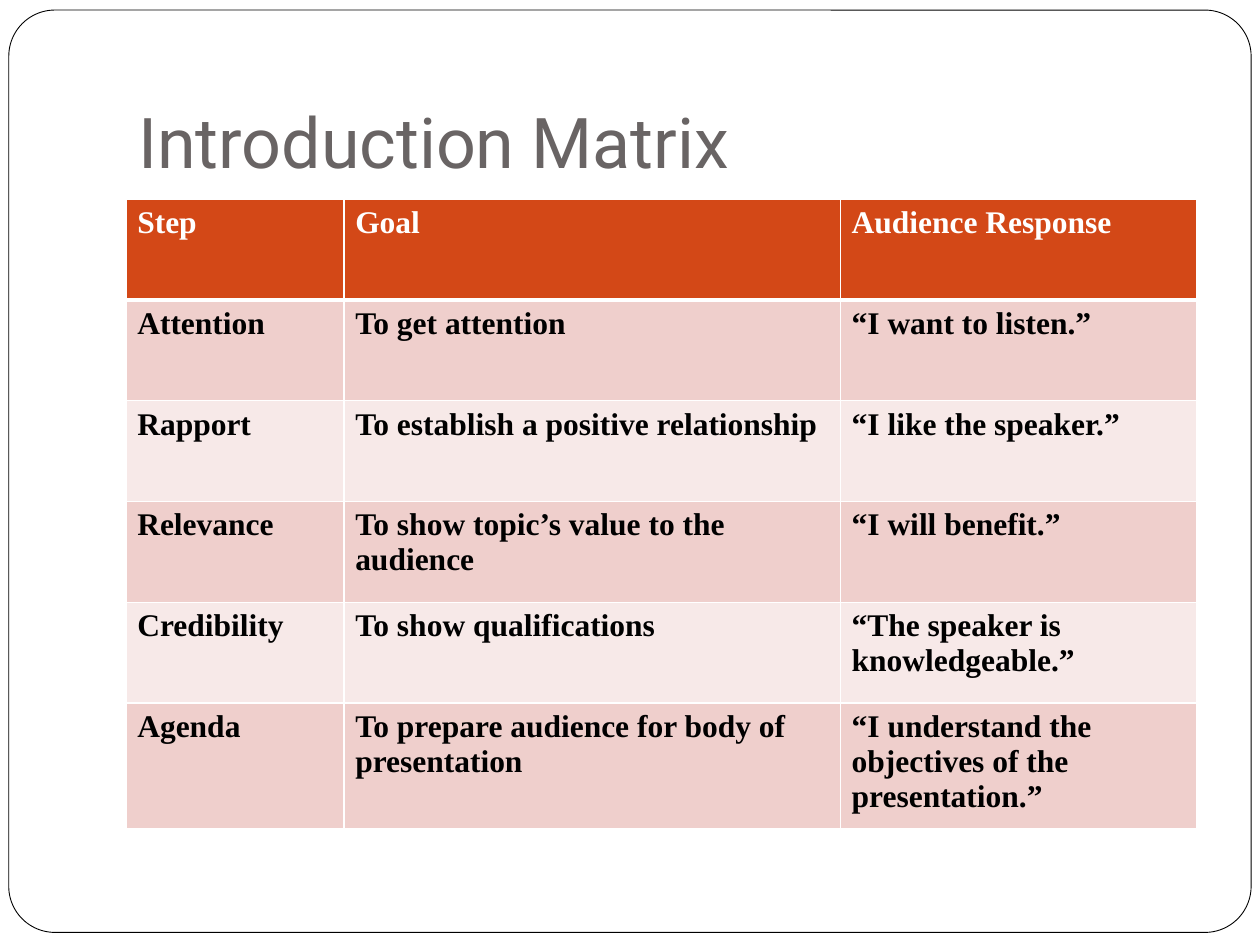
from dataclasses import dataclass

from lxml import etree
from pptx import Presentation
from pptx.dml.color import RGBColor
from pptx.enum import shapes, text
from pptx.oxml import ns
from pptx.util import Inches, Pt


@dataclass(frozen=True)
class Theme:
    title_font: str = "Roboto"
    body_font: str = "Times New Roman"
    title_size: float = 40
    body_size: float = 18
    title: str = "696464"
    header: str = "D34817"
    bands: tuple[str, str] = ("EFCFCC", "F7E9E8")
    white: str = "FFFFFF"
    black: str = "000000"
    rule: float = 1
    header_rule: float = 3


@dataclass(frozen=True)
class Step:
    name: str
    goal: str
    response: str


THEME = Theme()
HEADER = Step("Step", "Goal", "Audience Response")
STEPS = [
    Step("Attention", "To get attention", "“I want to listen.”"),
    Step("Rapport", "To establish a positive relationship", "“I like the speaker.”"),
    Step("Relevance", "To show topic’s value to the audience", "“I will benefit.”"),
    Step("Credibility", "To show qualifications", "“The speaker is knowledgeable.”"),
    Step("Agenda", "To prepare audience for body of presentation",
         "“I understand the objectives of the presentation.”"),
]
COLUMN_WIDTHS = (1.73, 3.94, 2.83)
ROW_HEIGHT = 0.8


def write(frame, words: str, *, font: str, size: float, color: str, bold: bool = False) -> None:
    """Put one formatted paragraph in a text frame."""
    frame.word_wrap = True
    span = frame.paragraphs[0].add_run()
    span.text = words
    span.font.name = font
    span.font.size = Pt(size)
    span.font.bold = bold
    span.font.color.rgb = RGBColor.from_string(color)


def set_borders(cell, color: str, **widths: float) -> None:
    """Draw cell edges, given as L, R, T and B in points; call before the fill."""
    properties = cell._tc.get_or_add_tcPr()
    for edge, width in widths.items():
        line = etree.SubElement(properties, ns.qn(f"a:ln{edge}"), w=str(Pt(width)))
        fill = etree.SubElement(line, ns.qn("a:solidFill"))
        etree.SubElement(fill, ns.qn("a:srgbClr"), val=color)


def add_frame(page) -> None:
    box = page.shapes.add_shape(shapes.MSO_SHAPE.ROUNDED_RECTANGLE,
                                Inches(0.07), Inches(0.08), Inches(9.86), Inches(7.32))
    box.adjustments[0] = 0.05
    box.shadow.inherit = False
    box.fill.solid()
    box.fill.fore_color.rgb = RGBColor.from_string(THEME.white)
    box.line.color.rgb = RGBColor.from_string(THEME.black)
    box.line.width = Pt(0.5)


def add_title(page, words: str) -> None:
    box = page.shapes.add_textbox(Inches(1), Inches(0.3), Inches(8.5), Inches(1.25))
    frame = box.text_frame
    frame.vertical_anchor = text.MSO_ANCHOR.BOTTOM
    frame.margin_bottom = Inches(0.1)
    write(frame, words, font=THEME.title_font, size=THEME.title_size, color=THEME.title)


def add_matrix(page, steps: list[Step]) -> None:
    rows = [HEADER, *steps]
    table = page.shapes.add_table(len(rows), len(COLUMN_WIDTHS), Inches(1), Inches(1.58),
                                  Inches(sum(COLUMN_WIDTHS)),
                                  Inches(ROW_HEIGHT * len(rows))).table
    for column, width in zip(table.columns, COLUMN_WIDTHS):
        column.width = Inches(width)
    for index, step in enumerate(rows):
        is_header = index == 0
        background = THEME.header if is_header else THEME.bands[(index - 1) % 2]
        ink = THEME.white if is_header else THEME.black
        # The heavy rule is shared by the header and the row below it
        top = THEME.header_rule if index == 1 else THEME.rule
        bottom = THEME.header_rule if is_header else THEME.rule
        for cell, words in zip(table.rows[index].cells, (step.name, step.goal, step.response)):
            set_borders(cell, THEME.white, L=THEME.rule, R=THEME.rule, T=top, B=bottom)
            cell.fill.solid()
            cell.fill.fore_color.rgb = RGBColor.from_string(background)
            cell.margin_left = cell.margin_right = Inches(0.09)
            write(cell.text_frame, words, font=THEME.body_font, size=THEME.body_size,
                  color=ink, bold=True)


def main() -> None:
    deck = Presentation()
    deck.slide_width, deck.slide_height = Inches(10), Inches(7.5)
    page = deck.slides.add_slide(deck.slide_layouts[6])

    # Rounded page border, heading, then the matrix
    add_frame(page)
    add_title(page, "Introduction Matrix")
    add_matrix(page, STEPS)

    deck.save("out.pptx")


if __name__ == "__main__":
    main()
